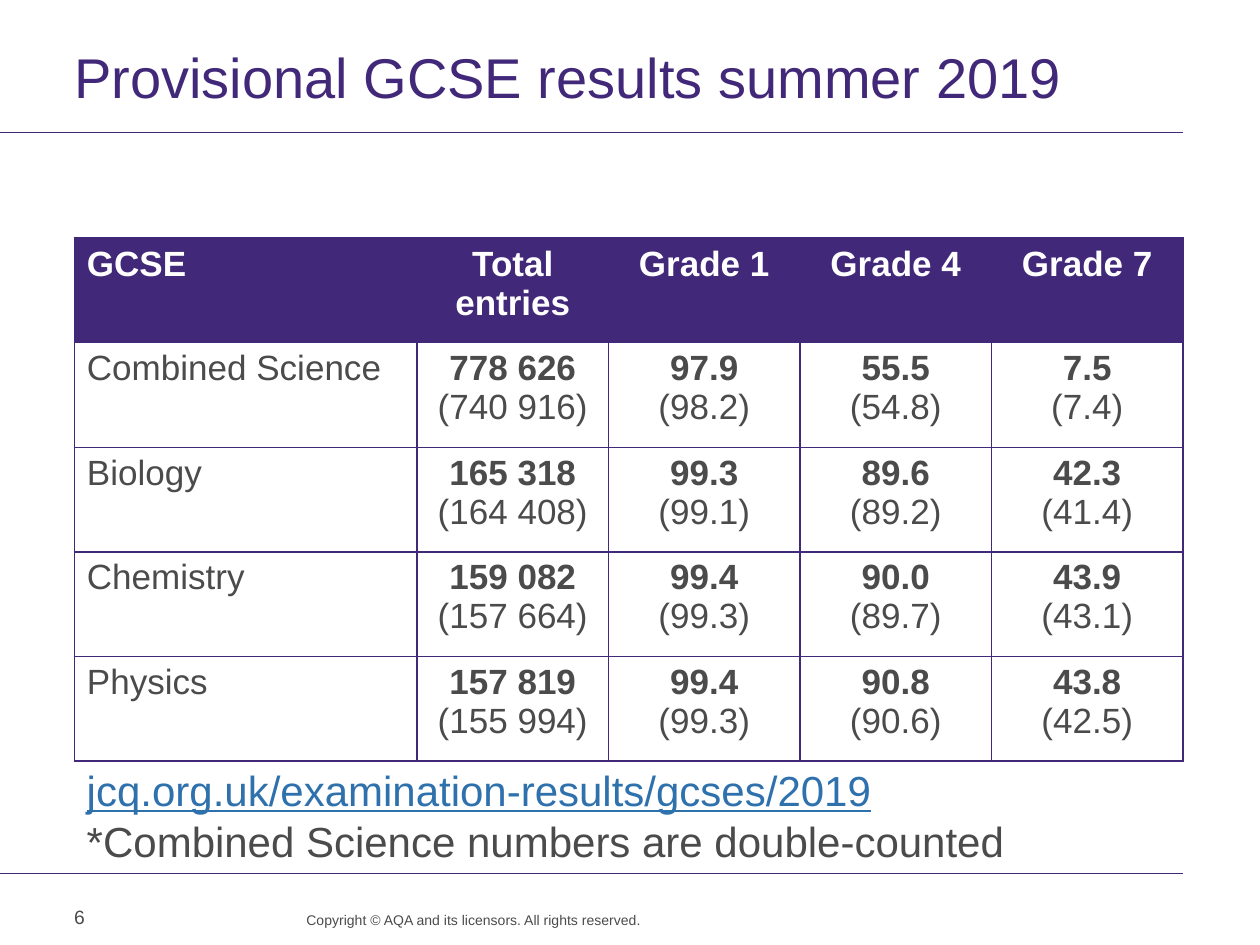
from dataclasses import dataclass
from typing import Optional

from lxml.etree import SubElement
from pptx import Presentation
from pptx.dml.color import RGBColor
from pptx.enum.shapes import MSO_CONNECTOR as Connector
from pptx.enum.text import MSO_ANCHOR as Anchor, MSO_AUTO_SIZE as AutoSize, PP_ALIGN as Align
from pptx.oxml.ns import qn
from pptx.util import Emu, Pt

PX = 9144  # 100 px to the inch
FONT = "Arial"
COLORS = {"purple": "412878", "grey": "4B4B4B", "link": "2F71AC", "white": "FFFFFF"}


@dataclass
class Span:
    text: str
    size: float
    color: str
    bold: bool = False
    underline: bool = False


@dataclass
class TextBox:
    left: int
    top: int
    width: int
    height: int
    spans: list[Span]  # one paragraph each
    insets: tuple[int, int, int, int] = (10, 5, 10, 5)
    align: Align = Align.LEFT
    anchor: Anchor = Anchor.TOP
    line_spacing: Optional[int] = None
    grow: bool = False


@dataclass
class Subject:
    name: str
    results: list[tuple[str, str]]  # (2019, previous year)


def px(length: int) -> Emu:
    return Emu(length * PX)


def rgb(name: str) -> RGBColor:
    return RGBColor.from_string(COLORS[name])


def add_span(para, span: Span) -> None:
    run = para.add_run()
    run.text = span.text
    font = run.font
    font.name, font.size = FONT, Pt(span.size)
    font.bold, font.underline = span.bold, span.underline
    font.color.rgb = rgb(span.color)


def fill_text(frame, spans: list[Span], align: Align, line_spacing: Optional[int] = None) -> None:
    for index, span in enumerate(spans):
        para = frame.add_paragraph() if index else frame.paragraphs[0]
        para.alignment = align
        if line_spacing:
            para.line_spacing = Pt(line_spacing)
        add_span(para, span)


def add_text(page, item: TextBox) -> None:
    box = page.shapes.add_textbox(px(item.left), px(item.top), px(item.width), px(item.height))
    frame = box.text_frame
    frame.word_wrap = True
    frame.auto_size = AutoSize.SHAPE_TO_FIT_TEXT if item.grow else AutoSize.NONE
    frame.vertical_anchor = item.anchor
    (frame.margin_left, frame.margin_top,
     frame.margin_right, frame.margin_bottom) = map(px, item.insets)
    fill_text(frame, item.spans, item.align, item.line_spacing)


def add_rule(page, top: int) -> None:
    rule = page.shapes.add_connector(Connector.STRAIGHT, 0, px(top), px(939), px(top))
    rule.line.color.rgb = rgb("purple")
    rule.line.width = Pt(0.6)
    SubElement(rule._element.spPr, qn("a:effectLst"))


def style_cell(cell, fill: str) -> None:
    properties = cell._tc.get_or_add_tcPr()
    for side in ("L", "R", "T", "B"):
        border = SubElement(properties, qn(f"a:ln{side}"), w=str(Pt(1)))
        SubElement(SubElement(border, qn("a:solidFill")), qn("a:srgbClr"), val=COLORS["purple"])
    cell.fill.solid()
    cell.fill.fore_color.rgb = rgb(fill)


def add_results(page, headings: list[str], subjects: list[Subject]) -> None:
    widths = [272] + [152] * (len(headings) - 1)
    row_height = 83
    rows = [[[Span(heading, 20, "white", bold=True)] for heading in headings]]
    for subject in subjects:
        rows.append([[Span(subject.name, 20, "grey")]] + [
            [Span(current, 20, "grey", bold=True), Span(f"({previous})", 20, "grey")]
            for current, previous in subject.results])

    table = page.shapes.add_table(len(rows), len(widths), px(59), px(189),
                                  px(sum(widths)), px(row_height * len(rows))).table
    for column, width in zip(table.columns, widths):
        column.width = px(width)
    for row_index, row in enumerate(rows):
        table.rows[row_index].height = px(row_height)
        for column_index, spans in enumerate(row):
            cell = table.cell(row_index, column_index)
            style_cell(cell, "white" if row_index else "purple")
            fill_text(cell.text_frame, spans, Align.CENTER if column_index else Align.LEFT)


HEADINGS = ["GCSE", "Total entries", "Grade 1", "Grade 4", "Grade 7"]
SUBJECTS = [
    Subject("Combined Science", [("778 626", "740 916"), ("97.9", "98.2"),
                                 ("55.5", "54.8"), ("7.5", "7.4")]),
    Subject("Biology", [("165 318", "164 408"), ("99.3", "99.1"),
                        ("89.6", "89.2"), ("42.3", "41.4")]),
    Subject("Chemistry", [("159 082", "157 664"), ("99.4", "99.3"),
                          ("90.0", "89.7"), ("43.9", "43.1")]),
    Subject("Physics", [("157 819", "155 994"), ("99.4", "99.3"),
                        ("90.8", "90.6"), ("43.8", "42.5")]),
]
TITLE = TextBox(59, 48, 880, 47, [Span("Provisional GCSE results summer 2019", 32, "purple")],
                insets=(0, 0, 10, 0), line_spacing=28)
COPYRIGHT = TextBox(216, 723, 293, 26,
                    [Span("Copyright © AQA and its licensors. All rights reserved.", 8, "grey")],
                    insets=(0, 0, 0, 0), align=Align.RIGHT, line_spacing=10)
PAGE_NUMBER = TextBox(49, 708, 76, 40, [Span("6", 11, "grey")], anchor=Anchor.MIDDLE)
NOTES = TextBox(59, 602, 853, 91,
                [Span("jcq.org.uk/examination-results/gcses/2019", 24, "link", underline=True),
                 Span("*Combined Science numbers are double-counted", 24, "grey")], grow=True)


def main() -> None:
    deck = Presentation()
    deck.slide_width, deck.slide_height = px(1000), px(750)
    page = deck.slides.add_slide(deck.slide_layouts[6])

    # Rules above and below the content
    for top in (105, 693):
        add_rule(page, top)

    # Title and footer
    for item in (TITLE, COPYRIGHT, PAGE_NUMBER):
        add_text(page, item)

    # Results table, then its source and footnote
    add_results(page, HEADINGS, SUBJECTS)
    add_text(page, NOTES)

    deck.save("out.pptx")


if __name__ == "__main__":
    main()
